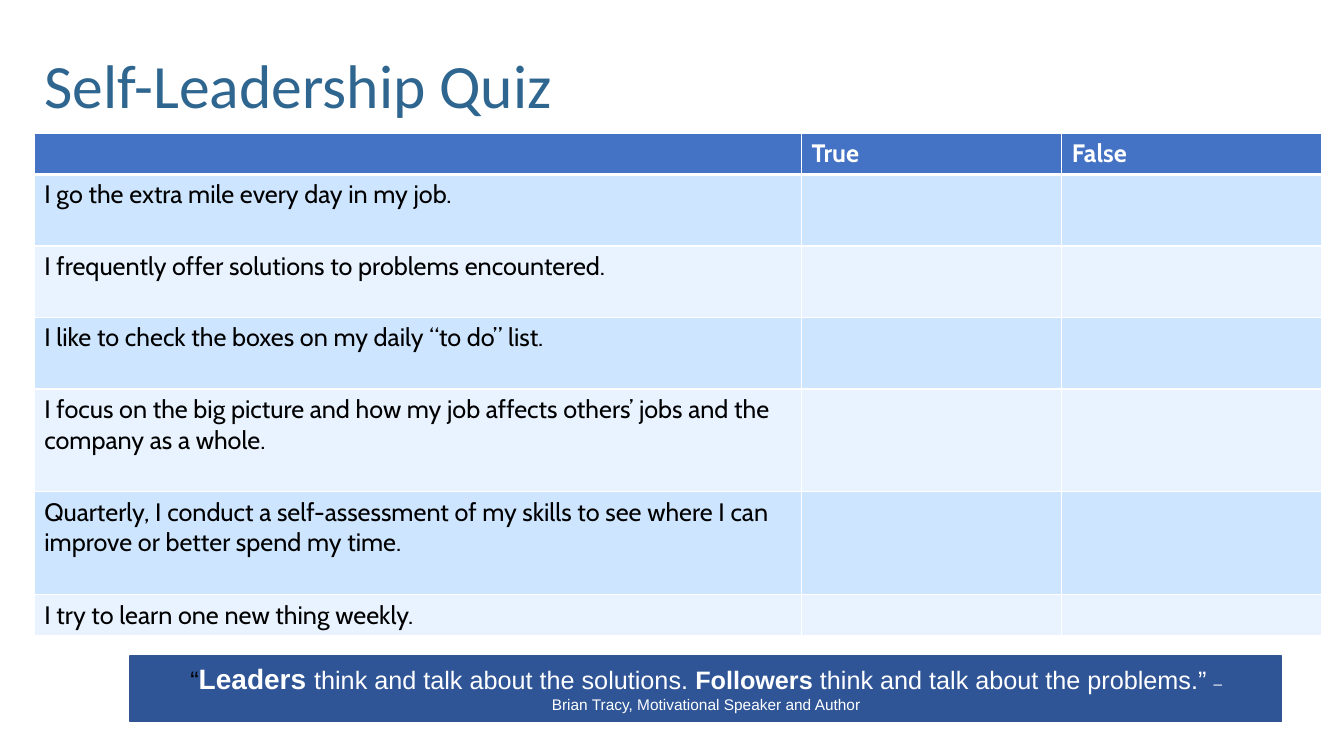
from pptx import Presentation
from pptx.dml.color import RGBColor
from pptx.enum.shapes import MSO_SHAPE as Shape
from pptx.enum.text import MSO_ANCHOR as Anchor, PP_ALIGN as Align
from pptx.oxml.ns import qn
from pptx.util import Inches, Pt
from lxml.etree import SubElement

WHITE = RGBColor(0xFF, 0xFF, 0xFF)
BLACK = RGBColor(0, 0, 0)
TEAL = RGBColor(0x2F, 0x66, 0x90)
HEAD = RGBColor(0x44, 0x72, 0xC4)
BANDS = [RGBColor(0xE8, 0xF3, 0xFF), RGBColor(0xCD, 0xE5, 0xFE)]
NAVY = RGBColor(0x2F, 0x55, 0x97)
EDGE = RGBColor(0x32, 0x54, 0x91)

COLS = [7.61, 2.58, 2.58]
ROWS = [
    (0.41, ["", "True", "False"]),
    (0.71, ["I go the extra mile every day in my job."]),
    (0.71, ["I frequently offer solutions to problems encountered."]),
    (0.71, ["I like to check the boxes on my daily “to do” list."]),
    (1.02, ["I focus on the big picture and how my job affects others’ jobs "
            "and the company as a whole."]),
    (1.02, ["Quarterly, I conduct a self-assessment of my skills to see where "
            "I can improve or better spend my time."]),
    (0.41, ["I try to learn one new thing weekly."]),
]
QUOTE = [
    ("“", 18, False, BLACK),
    ("Leaders ", 20, True, WHITE),
    ("think and talk about the solutions. ", 18, False, WHITE),
    ("Followers", 18, True, WHITE),
    (" think and talk about the problems.” ", 18, False, WHITE),
    ("– Brian Tracy, Motivational Speaker and Author", 11, False, WHITE),
]


def style(font, name, size, color, bold=False):
    font.name, font.size, font.bold = name, Pt(size), bold
    font.color.rgb = color


def add_title(slide, x, y, w, h):
    title = slide.shapes.title
    title.left, title.top, title.width, title.height = map(Inches, (x, y, w, h))
    frame = title.text_frame
    frame.text = "Self-Leadership Quiz"
    frame.vertical_anchor = Anchor.MIDDLE
    para = frame.paragraphs[0]
    para.alignment = Align.LEFT
    para.line_spacing = 0.9
    style(para.font, "Calibri", 44, TEAL)


def add_edges(cell, row):
    props = cell._tc.get_or_add_tcPr()
    for side in "LRTB":
        thick = (row, side) in [(0, "B"), (1, "T")]
        line = SubElement(props, qn(f"a:ln{side}"), w=str(Pt(3 if thick else 1)))
        fill = SubElement(line, qn("a:solidFill"))
        SubElement(fill, qn("a:srgbClr"), val=str(WHITE))


def add_quiz(slide, x, y):
    high = sum(size for size, _ in ROWS)
    box = map(Inches, (x, y, sum(COLS), high))
    table = slide.shapes.add_table(len(ROWS), len(COLS), *box).table
    for col, wide in zip(table.columns, COLS):
        col.width = Inches(wide)
    for i, (size, texts) in enumerate(ROWS):
        table.rows[i].height = Inches(size)
        for j in range(len(COLS)):
            cell = table.cell(i, j)
            add_edges(cell, i)
            cell.fill.solid()
            cell.fill.fore_color.rgb = BANDS[i % 2] if i else HEAD
            if j < len(texts) and texts[j]:
                cell.text = texts[j]
                font = cell.text_frame.paragraphs[0].font
                style(font, "Cabin", 18, BLACK if i else WHITE, i == 0)


def add_quote(slide, x, y, w, h):
    bar = slide.shapes.add_shape(Shape.RECTANGLE, *map(Inches, (x, y, w, h)))
    bar.shadow.inherit = False
    bar.fill.solid()
    bar.fill.fore_color.rgb = NAVY
    bar.line.color.rgb = EDGE
    bar.line.width = Pt(1)
    area = map(Inches, (x + 0.49, y, w - 0.97, h - 0.03))
    frame = slide.shapes.add_textbox(*area).text_frame
    frame.word_wrap = True
    para = frame.paragraphs[0]
    para.alignment = Align.CENTER
    for text, size, bold, color in QUOTE:
        run = para.add_run()
        run.text = text
        style(run.font, "Arial", size, color, bold)


def main():
    deck = Presentation()
    deck.slide_width, deck.slide_height = Inches(13.33), Inches(7.5)
    slide = deck.slides.add_slide(deck.slide_layouts[5])
    add_title(slide, 0.34, 0.15, 11.5, 1.45)
    add_quiz(slide, 0.34, 1.32)
    add_quote(slide, 1.29, 6.51, 11.42, 0.65)
    deck.save("out.pptx")


if __name__ == "__main__":
    main()
